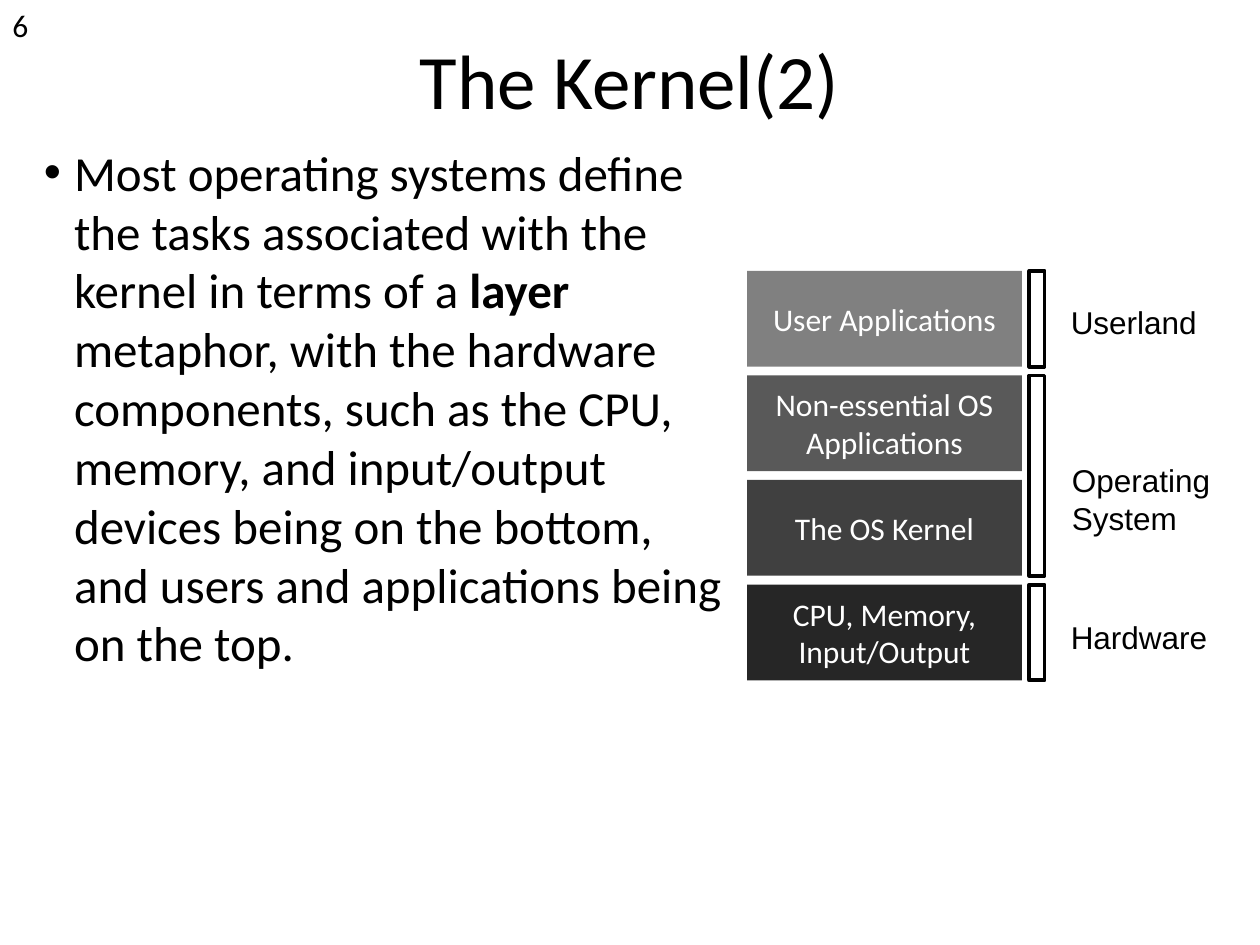
from dataclasses import dataclass

from lxml import etree
from pptx import Presentation
from pptx.dml.color import RGBColor
from pptx.enum.shapes import MSO_SHAPE
from pptx.enum.text import MSO_ANCHOR, PP_ALIGN
from pptx.oxml.ns import qn
from pptx.util import Inches, Pt

RECTANGLE = MSO_SHAPE.RECTANGLE
TOP, MIDDLE = MSO_ANCHOR.TOP, MSO_ANCHOR.MIDDLE
LEFT, CENTER = PP_ALIGN.LEFT, PP_ALIGN.CENTER


@dataclass(frozen=True)
class Theme:
    """Fonts, type sizes in points and colours of the slide."""

    main_font: str = "Calibri"
    label_font: str = "Arial"
    title_size: int = 44
    body_size: int = 28
    small_size: int = 18
    ink: str = "000000"
    paper: str = "FFFFFF"
    layers: tuple = ("808080", "595959", "404040", "262626")
    outline: float = 2.25


THEME = Theme()
LAYERS = (
    "User Applications",
    "Non-essential OS Applications",
    "The OS Kernel",
    "CPU, Memory, Input/Output",
)
GROUPS = (
    (0, 1, "Userland", (8.4, 2.36, 1.4, 0.4)),
    (1, 2, "Operating\nSystem", (8.41, 3.61, 1.4, 0.7)),
    (3, 1, "Hardware", (8.4, 4.86, 1.4, 0.4)),
)
BODY = (
    ("Most operating systems define the tasks associated with the kernel "
     "in terms of a ", False),
    ("layer ", True),
    ("metaphor, with the hardware components, such as the CPU, memory, and "
     "input/output devices being on the bottom, and users and applications "
     "being on the top.", False),
)


def inches(box):
    """Convert a box of left, top, width and height to lengths."""
    return [Inches(value) for value in box]


def style_para(para, size, font=THEME.main_font, color=THEME.ink, align=LEFT):
    """Set the alignment and font of a paragraph."""
    para.alignment = align
    para.font.size = Pt(size)
    para.font.name = font
    para.font.color.rgb = RGBColor.from_string(color)


def add_text(page, box, text, size, anchor=TOP, **style):
    """Add a text box with one paragraph per line of text."""
    frame = page.shapes.add_textbox(*inches(box)).text_frame
    frame.word_wrap = True
    frame.vertical_anchor = anchor
    frame.text = text
    for para in frame.paragraphs:
        style_para(para, size, **style)
    return frame


def add_body(page, box):
    """Add the bulleted explanation with its bold key word."""
    para = add_text(page, box, "", THEME.body_size).paragraphs[0]
    for text, bold in BODY:
        span = para.add_run()
        span.text = text
        span.font.bold = bold
    properties = para._p.get_or_add_pPr()
    indent = Inches(0.24)
    properties.set("marL", str(indent))
    properties.set("indent", str(-indent))
    bullet_font = etree.Element(qn("a:buFont"), typeface=THEME.label_font)
    bullet = etree.Element(qn("a:buChar"), char="•")
    defaults = properties.find(qn("a:defRPr"))
    for element in (bullet_font, bullet):
        defaults.addprevious(element)


def add_rectangle(page, box):
    """Add a plain rectangle without shadow."""
    shape = page.shapes.add_shape(RECTANGLE, *inches(box))
    shape.shadow.inherit = False
    return shape


def add_layer(page, box, text, color):
    """Add one filled layer with its centred name."""
    shape = add_rectangle(page, box)
    shape.fill.solid()
    shape.fill.fore_color.rgb = RGBColor.from_string(color)
    shape.line.fill.background()
    frame = shape.text_frame
    frame.word_wrap = True
    frame.vertical_anchor = MIDDLE
    frame.text = text
    style_para(frame.paragraphs[0], THEME.small_size,
               color=THEME.paper, align=CENTER)


def add_bar(page, box):
    """Add an outlined bar that marks the extent of a group."""
    shape = add_rectangle(page, box)
    shape.fill.background()
    shape.line.color.rgb = RGBColor.from_string(THEME.ink)
    shape.line.width = Pt(THEME.outline)


def add_layer_diagram(page, box):
    """Stack the layers in the box, with group bars and labels on the right."""
    left, top, width, height = box
    gap, bar_gap, bar_width = 0.07, 0.06, 0.12
    layer_height = (height - gap * (len(LAYERS) - 1)) / len(LAYERS)
    pitch = layer_height + gap
    layer_width = width - bar_gap - bar_width
    for row, (text, color) in enumerate(zip(LAYERS, THEME.layers)):
        add_layer(page, (left, top + row * pitch, layer_width, layer_height),
                  text, color)
    bar_left = left + width - bar_width
    for first, count, label, label_box in GROUPS:
        add_bar(page, (bar_left, top + first * pitch,
                       bar_width, count * pitch - gap))
        add_text(page, label_box, label, THEME.small_size,
                 font=THEME.label_font)


def build_kernel_slide(deck):
    """Add the kernel slide to the deck."""
    page = deck.slides.add_slide(deck.slide_layouts[6])
    add_text(page, (0.5, 0, 9, 1.25), "The Kernel(2)", THEME.title_size,
             anchor=MIDDLE, align=CENTER)
    add_body(page, (0.25, 1.08, 5.67, 6.08))
    add_text(page, (0, 0, 0.5, 0.4), "6", THEME.small_size)
    add_layer_diagram(page, (5.93, 2.15, 2.36, 3.25))


def main():
    """Build and save the deck."""
    deck = Presentation()
    deck.slide_width, deck.slide_height = Inches(10), Inches(7.5)
    build_kernel_slide(deck)
    deck.save("out.pptx")


if __name__ == "__main__":
    main()
